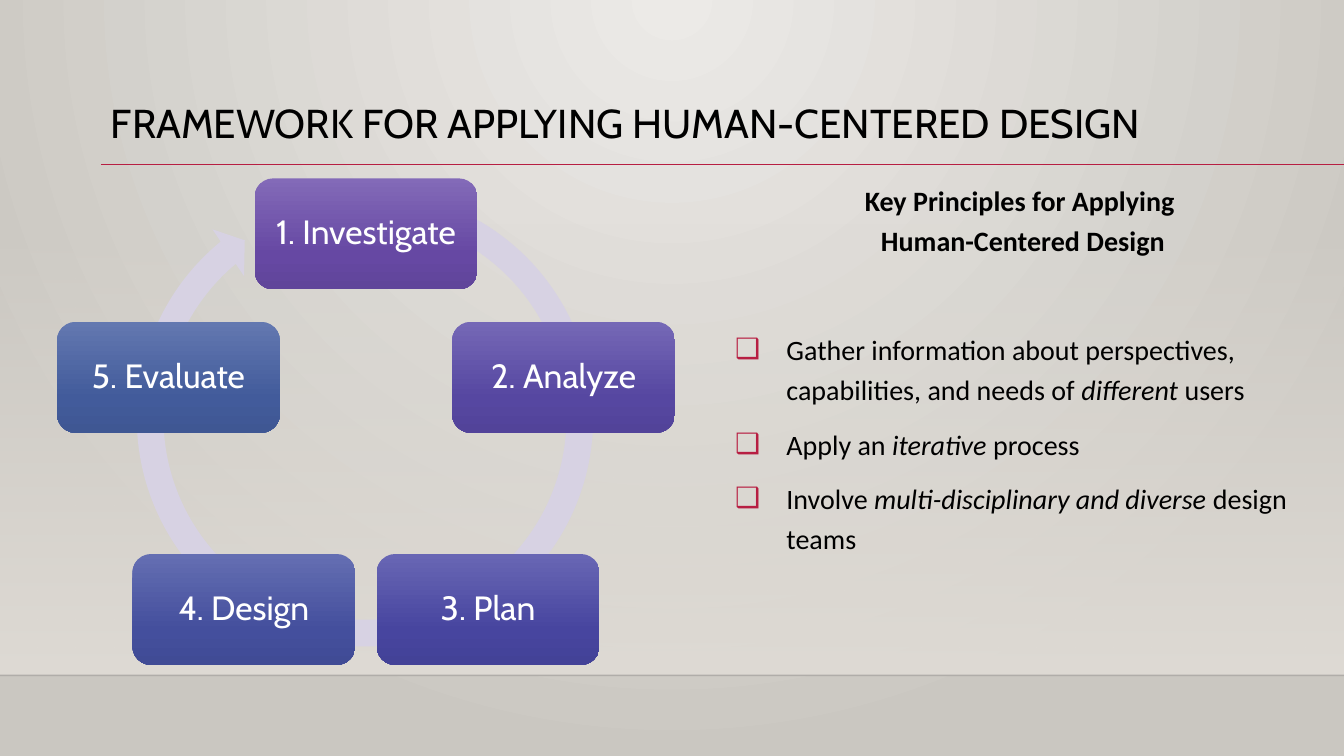
import math

from lxml import etree
from pptx import Presentation
from pptx import util as u
from pptx.dml.color import RGBColor
from pptx.enum import shapes, text
from pptx.oxml.ns import qn

INK, ACCENT, WHITE = "000000", "B71E42", "FFFFFF"
RADIAL, DOWNWARD = "radial", "downward"


def color(value):
    return RGBColor.from_string(value)


def add_child(parent, tag, **attributes):
    child = etree.SubElement(parent, qn(tag))
    for name, value in attributes.items():
        child.set(name, str(value))
    return child


class SlideBuilder:
    heading_font, body_font = "Cabin", "Calibri"

    def __init__(self, presentation):
        self.slide = presentation.slides.add_slide(presentation.slide_layouts[1])

    def gradient(self, fill, owner, stops, direction):
        """Stops are (percent, colour, opacity percent)."""
        fill.gradient()
        gradient = owner.find(".//" + qn("a:gradFill"))
        for child in list(gradient):
            gradient.remove(child)
        stop_list = add_child(gradient, "a:gsLst")
        for position, value, opacity in stops:
            stop = add_child(stop_list, "a:gs", pos=position * 1000)
            stop_color = add_child(stop, "a:srgbClr", val=value)
            if opacity < 100:
                add_child(stop_color, "a:alpha", val=opacity * 1000)
        if direction == RADIAL:
            path_element = add_child(gradient, "a:path", path="circle")
            add_child(path_element, "a:fillToRect", l=43000, t=0, r=43000, b=100000)
        else:
            add_child(gradient, "a:lin", ang=5400000, scaled=0)

    def background(self, stops):
        self.gradient(self.slide.background.fill, self.slide.element, stops, RADIAL)

    def shape(self, kind, left, top, width, height, fill):
        """Fill is a hex colour or a list of gradient stops."""
        shape = self.slide.shapes.add_shape(
            kind, u.Inches(left), u.Inches(top), u.Inches(width), u.Inches(height))
        shape.shadow.inherit = False
        shape.line.fill.background()
        if isinstance(fill, str):
            shape.fill.solid()
            shape.fill.fore_color.rgb = color(fill)
        else:
            self.gradient(shape.fill, shape.element, fill, DOWNWARD)
        return shape

    def rule(self, left, right, y, value, width, opacity=100):
        line = self.slide.shapes.add_connector(
            shapes.MSO_CONNECTOR.STRAIGHT,
            u.Inches(left), u.Inches(y), u.Inches(right), u.Inches(y))
        line.line.color.rgb = color(value)
        line.line.width = u.Pt(width)
        if opacity < 100:
            line_color = line.element.spPr.find(".//" + qn("a:srgbClr"))
            add_child(line_color, "a:alpha", val=opacity * 1000)
        add_child(line.element.spPr, "a:effectLst")

    def format_paragraph(self, paragraph, font, size, value, alignment, spacing):
        paragraph.alignment = alignment
        paragraph.line_spacing = spacing
        for run in paragraph.runs:
            run.font.name = font
            run.font.size = u.Pt(size)
            run.font.color.rgb = color(value)

    def node(self, label, center_x, center_y, width, height, stops):
        shape = self.shape(shapes.MSO_SHAPE.ROUNDED_RECTANGLE, center_x - width / 2,
                           center_y - height / 2, width, height, stops)
        frame = shape.text_frame
        frame.text = label
        frame.margin_left = frame.margin_right = u.Inches(0.15)
        frame.vertical_anchor = text.MSO_ANCHOR.MIDDLE
        self.format_paragraph(frame.paragraphs[0], self.heading_font, 24, WHITE,
                              text.PP_ALIGN.CENTER, 0.9)

    def placeholder(self, index, left, top, width, height):
        """Move a placeholder in front of the decoration."""
        shape = self.slide.placeholders[index]
        shape.left, shape.top = u.Inches(left), u.Inches(top)
        shape.width, shape.height = u.Inches(width), u.Inches(height)
        shape.element.getparent().append(shape.element)
        shape.text_frame.auto_size = text.MSO_AUTO_SIZE.NONE
        shape.text_frame.word_wrap = True
        return shape.text_frame

    def title(self, wording, *box):
        frame = self.placeholder(0, *box)
        frame.text = wording
        frame.vertical_anchor = text.MSO_ANCHOR.MIDDLE
        self.format_paragraph(frame.paragraphs[0], self.heading_font, 28.8, INK,
                              text.PP_ALIGN.LEFT, 0.9)

    def principles(self, heading, items, *box):
        """Each item is a list of pieces; every second piece is italic."""
        frame = self.placeholder(1, *box)
        frame.margin_left = frame.margin_right = 0
        frame.margin_top = frame.margin_bottom = 0
        frame.text = heading
        first = frame.paragraphs[0]
        properties = first._p.get_or_add_pPr()
        properties.set("marL", "0")
        properties.set("indent", "0")
        add_child(properties, "a:buNone")
        self.format_paragraph(first, self.body_font, 20, INK, text.PP_ALIGN.CENTER, 1.2)
        first.space_before = u.Pt(0)
        for run in first.runs:
            run.font.bold = True

        for number, pieces in enumerate(items):
            paragraph = frame.add_paragraph()
            properties = paragraph._p.get_or_add_pPr()
            properties.set("marL", str(u.Inches(0.51)))
            properties.set("indent", str(-u.Inches(0.51)))
            bullet_color = add_child(properties, "a:buClr")
            add_child(bullet_color, "a:srgbClr", val=ACCENT)
            add_child(properties, "a:buChar", char="❑")
            for position, piece in enumerate(pieces):
                run = paragraph.add_run()
                run.text = piece
                run.font.italic = position % 2 == 1
            self.format_paragraph(paragraph, self.body_font, 20, INK,
                                  text.PP_ALIGN.LEFT, 1.2)
            paragraph.space_before = u.Pt(10 if number else 49)


def main():
    presentation = Presentation()
    presentation.slide_width = u.Inches(13.33)
    presentation.slide_height = u.Inches(7.5)
    builder = SlideBuilder(presentation)

    # Backdrop and rules
    builder.background([(0, "ECEAE7", 100), (100, "CAC7C1", 100)])
    builder.shape(shapes.MSO_SHAPE.RECTANGLE, 0, 2.21, 13.33, 4.49,
                  [(0, "DFDBD5", 0), (100, "DFDBD5", 100)])
    builder.rule(0, 13.33, 6.7, "000001", 1, opacity=20)
    builder.rule(1, 13.33, 1.63, ACCENT, 0.5)

    # Title
    builder.title("FRAMEWORK FOR APPLYING HUMAN-CENTERED DESIGN", 1, 0.97, 11.99, 0.54)

    # Cycle: steps evenly spaced clockwise from the top
    arrow = builder.shape(shapes.MSO_SHAPE.CIRCULAR_ARROW, 1.21, 1.74, 4.82, 4.82, "D7D2E3")
    for index, value in enumerate((0.055, 3.307, 138.28, 173.543, 0.058)):
        arrow.adjustments[index] = value
    steps = [
        ("1. Investigate", "836AB8", "6648A3", "60459A"),
        ("2. Analyze", "7568B6", "5647A1", "524399"),
        ("3. Plan", "6866B4", "47459F", "434297"),
        ("4. Design", "646EB2", "444F9D", "404B95"),
        ("5. Evaluate", "6378B0", "425B9B", "3F5793"),
    ]
    center_x, center_y, radius = 3.63, 4.38, 2.06
    for index, (label, *shades) in enumerate(steps):
        angle = math.tau * index / len(steps)
        stops = [(position, shade, 100) for position, shade in zip((0, 69, 100), shades)]
        builder.node(label, center_x + radius * math.sin(angle),
                     center_y - radius * math.cos(angle), 2.21, 1.1, stops)

    # Key principles
    builder.principles(
        "Key Principles for Applying \vHuman-Centered Design",
        [
            ["Gather information about perspectives, capabilities, and needs of ",
             "different ", "users"],
            ["Apply an ", "iterative", " process"],
            ["Involve ", "multi-disciplinary and diverse", " design teams"],
        ],
        7.29, 1.75, 5.71, 5.17)

    presentation.save("out.pptx")


if __name__ == "__main__":
    main()
